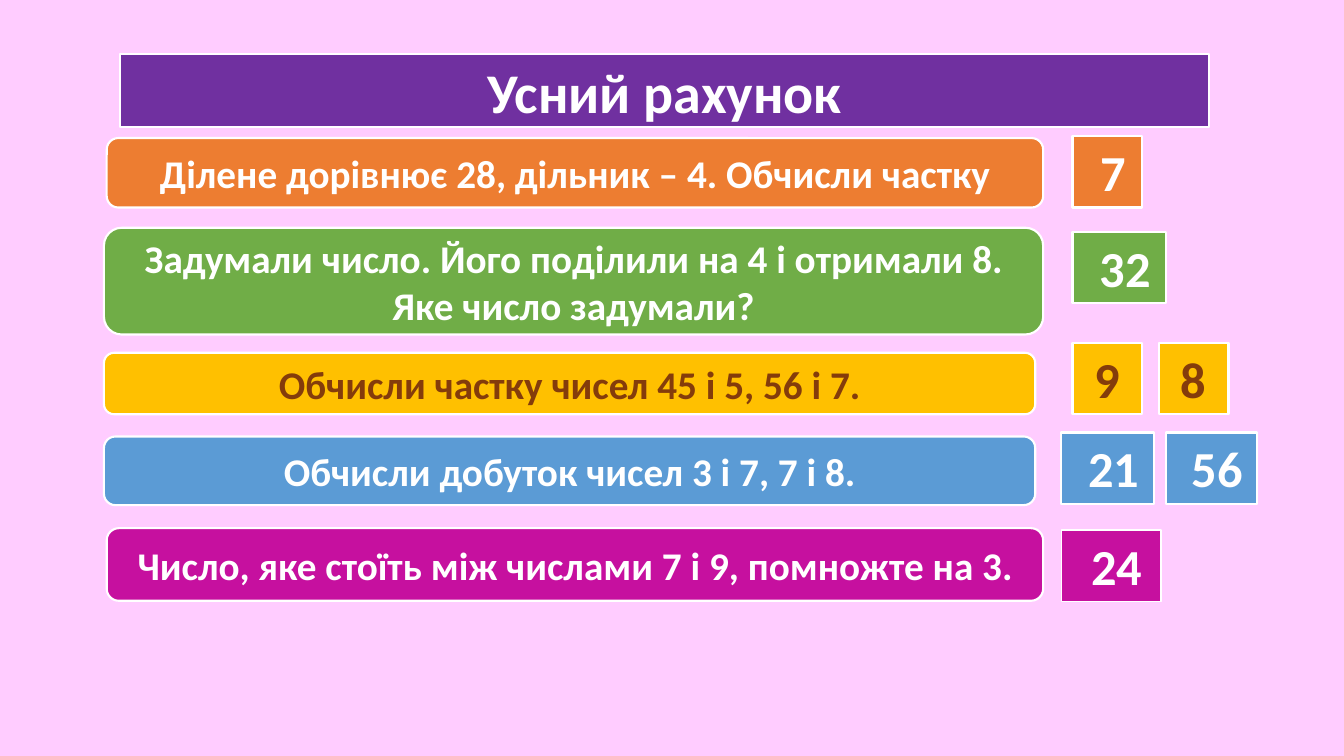
"""Build the mental arithmetic slide with five questions and their answers."""
from pptx import Presentation
from pptx.dml.color import RGBColor
from pptx.enum.shapes import MSO_SHAPE
from pptx.enum.text import MSO_ANCHOR, PP_ALIGN
from pptx.util import Cm, Pt

RECTANGLE = MSO_SHAPE.RECTANGLE
ROUNDED = MSO_SHAPE.ROUNDED_RECTANGLE
MIDDLE = MSO_ANCHOR.MIDDLE
TOP = MSO_ANCHOR.TOP
CENTER = PP_ALIGN.CENTER

COLORS = {
    "background": "FFCCFF", "white": "FFFFFF", "brown": "843C0B",
    "purple": "7030A0", "orange": "ED7D31", "green": "70AD47",
    "yellow": "FFC000", "blue": "5B9BD5", "magenta": "C6109F",
}
FONT = "Calibri"
INSET = 0.25
ANSWER_SHIFT = 0.29
ANSWER_HEIGHT = 1.8

TITLE = ("Усний рахунок", (3.02, 1.37, 27.46, 1.83))
# Answers are (text, left, width)
ROWS = [
    {"question": "Ділене дорівнює 28, дільник – 4. Обчисли частку",
     "area": (2.69, 3.48, 23.6, 1.75), "fill": "orange",
     "answer_top": 3.43, "answers": [("7", 27.03, 1.75)]},
    {"question": "Задумали число. Його поділили на 4 і отримали 8. Яке число задумали?",
     "area": (2.62, 5.74, 23.67, 2.69), "fill": "green",
     "answer_top": 5.84, "answers": [("32", 27.03, 2.36)]},
    {"question": "Обчисли частку чисел 45 і 5, 56 і 7.",
     "area": (2.62, 8.89, 23.47, 1.55), "fill": "yellow", "color": "brown", "shift": 0,
     "answer_top": 8.64, "answers": [("9", 27.03, 1.75), ("8", 29.21, 1.75)]},
    {"question": "Обчисли добуток чисел 3 і 7, 7 і 8.",
     "area": (2.62, 11, 23.47, 1.73), "fill": "blue",
     "answer_top": 10.9, "answers": [("21", 26.75, 2.34), ("56", 29.39, 2.29)]},
    {"question": "Число, яке стоїть між числами 7 і 9, помножте на 3.",
     "area": (2.69, 13.31, 23.6, 1.83), "fill": "magenta", "answer_line": 1,
     "answer_top": 13.36, "answers": [("24", 26.75, 2.51)]},
]


def rgb(name):
    return RGBColor.from_string(COLORS[name])


def add_box(page, text, area, *, fill, size, kind=RECTANGLE, color="white",
            anchor=MIDDLE, line_width=1.5, shift=0):
    box = page.shapes.add_shape(kind, *map(Cm, area))
    box.shadow.inherit = False
    box.fill.solid()
    box.fill.fore_color.rgb = rgb(fill)
    box.line.color.rgb = rgb("white")
    box.line.width = Pt(line_width)
    frame = box.text_frame
    frame.word_wrap = True
    frame.vertical_anchor = anchor
    frame.margin_left = Cm(INSET + shift)
    frame.margin_right = Cm(INSET)
    para = frame.paragraphs[0]
    para.alignment = CENTER
    span = para.add_run()
    span.text = text
    span.font.name = FONT
    span.font.size = Pt(size)
    span.font.bold = True
    span.font.color.rgb = rgb(color)


def main():
    deck = Presentation()
    deck.slide_width, deck.slide_height = Cm(33.87), Cm(19.05)
    page = deck.slides.add_slide(deck.slide_layouts[6])
    page.background.fill.solid()
    page.background.fill.fore_color.rgb = rgb("background")

    add_box(page, *TITLE, fill="purple", size=40)
    for row in ROWS:
        color = row.get("color", "white")
        add_box(page, row["question"], row["area"], fill=row["fill"], size=28,
                kind=ROUNDED, color=color)
        for text, left, width in row["answers"]:
            add_box(page, text, (left, row["answer_top"], width, ANSWER_HEIGHT),
                    fill=row["fill"], size=36, color=color, anchor=TOP,
                    line_width=row.get("answer_line", 1.5),
                    shift=row.get("shift", ANSWER_SHIFT))
    deck.save("out.pptx")


if __name__ == "__main__":
    main()
